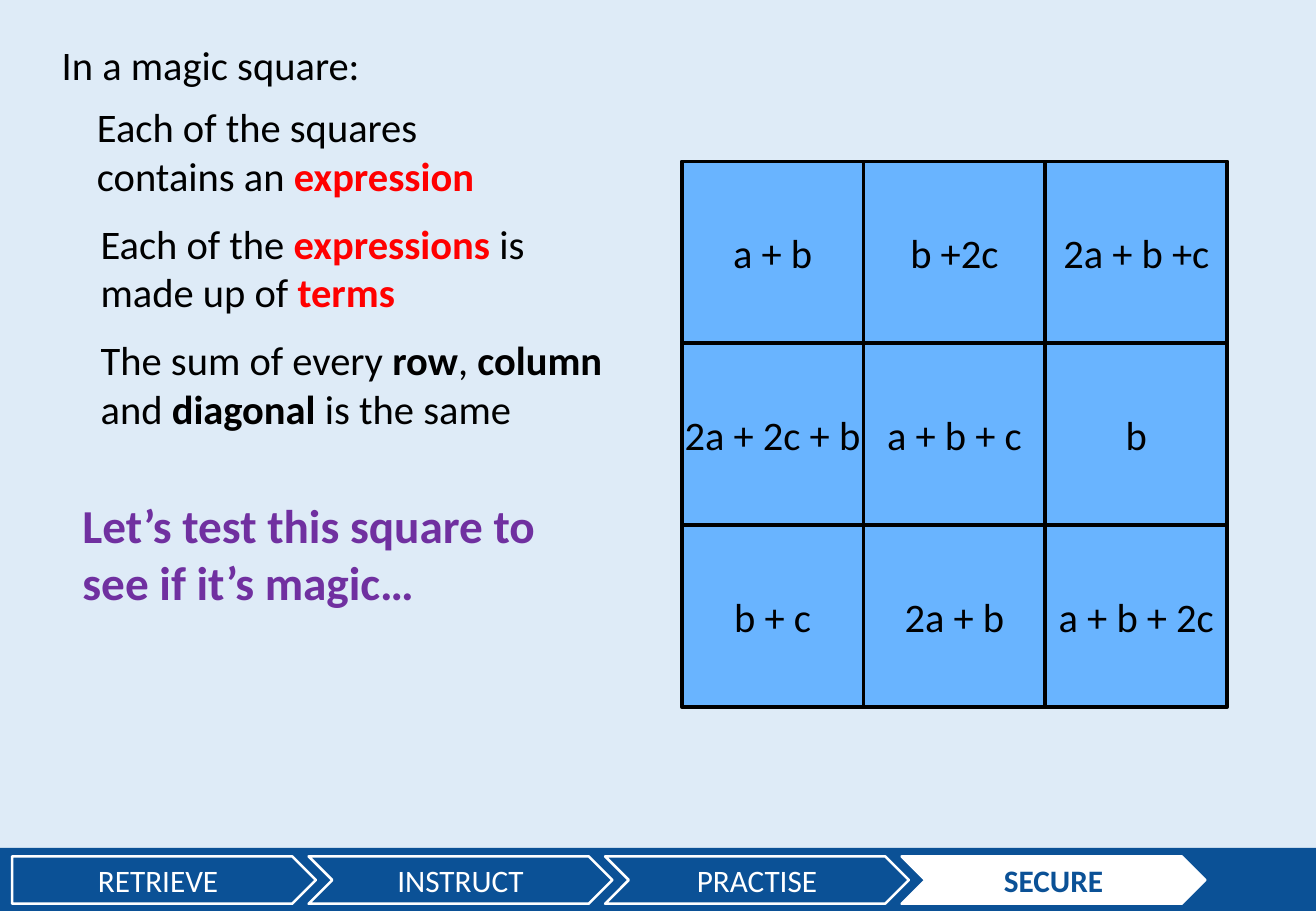
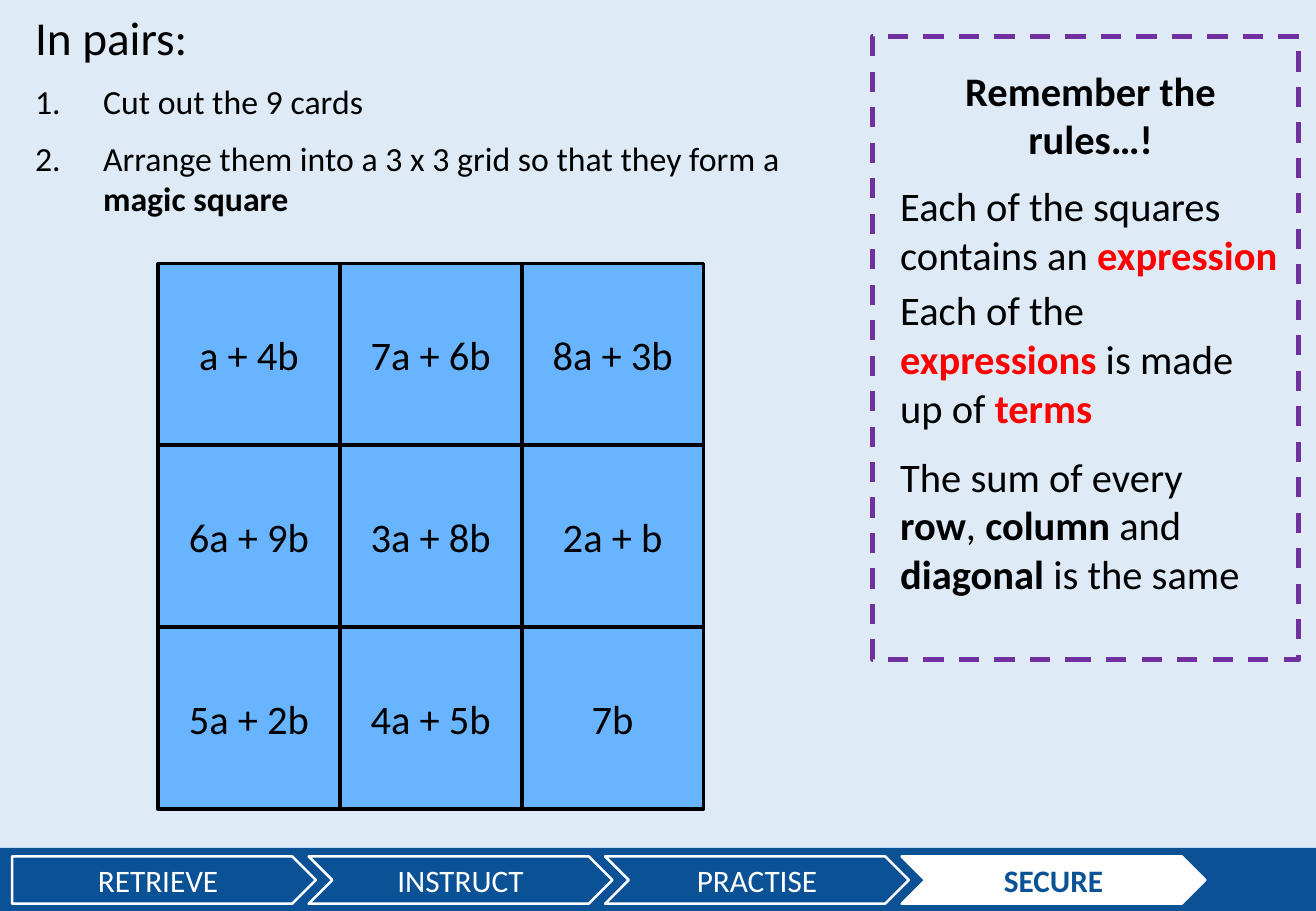
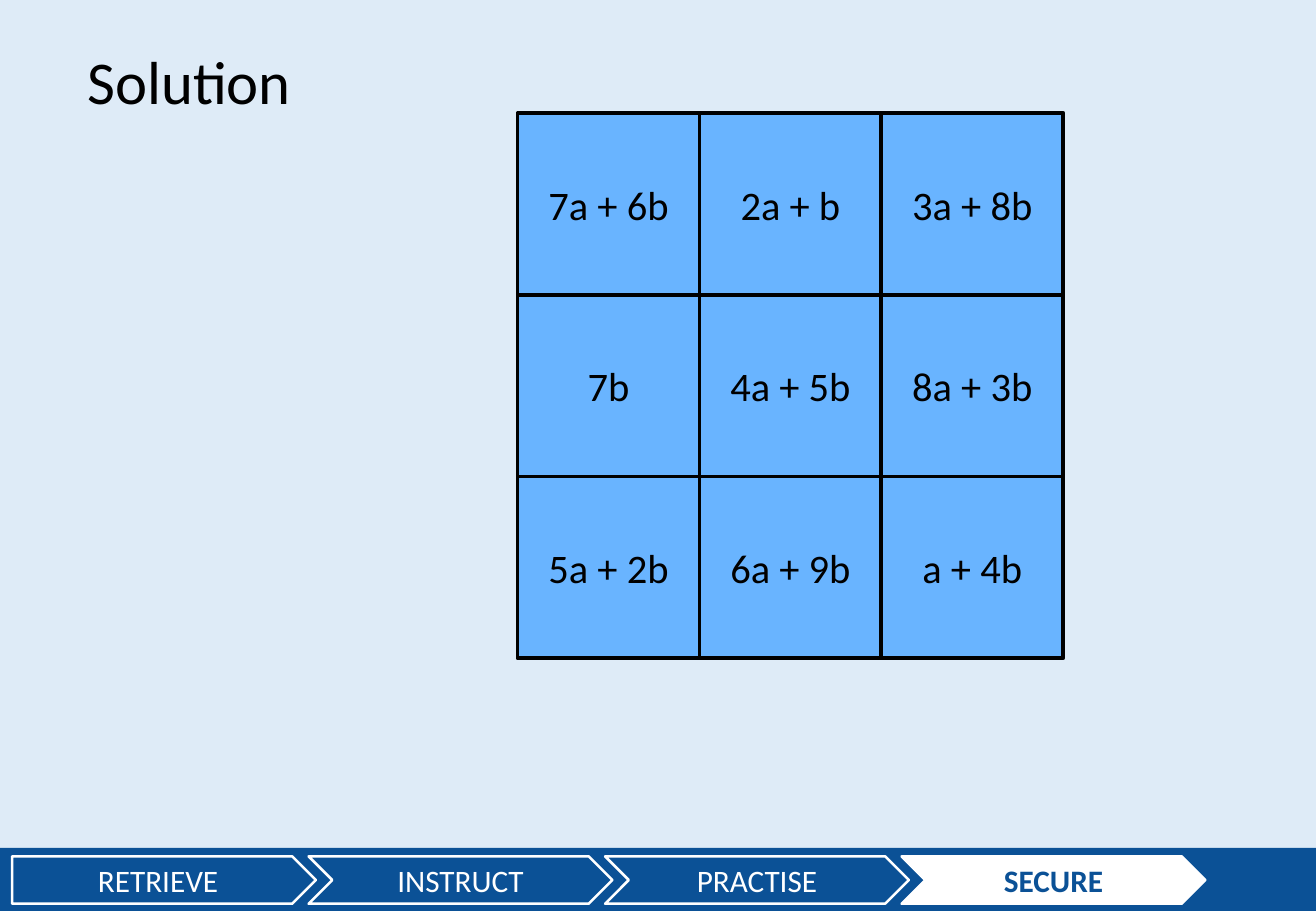
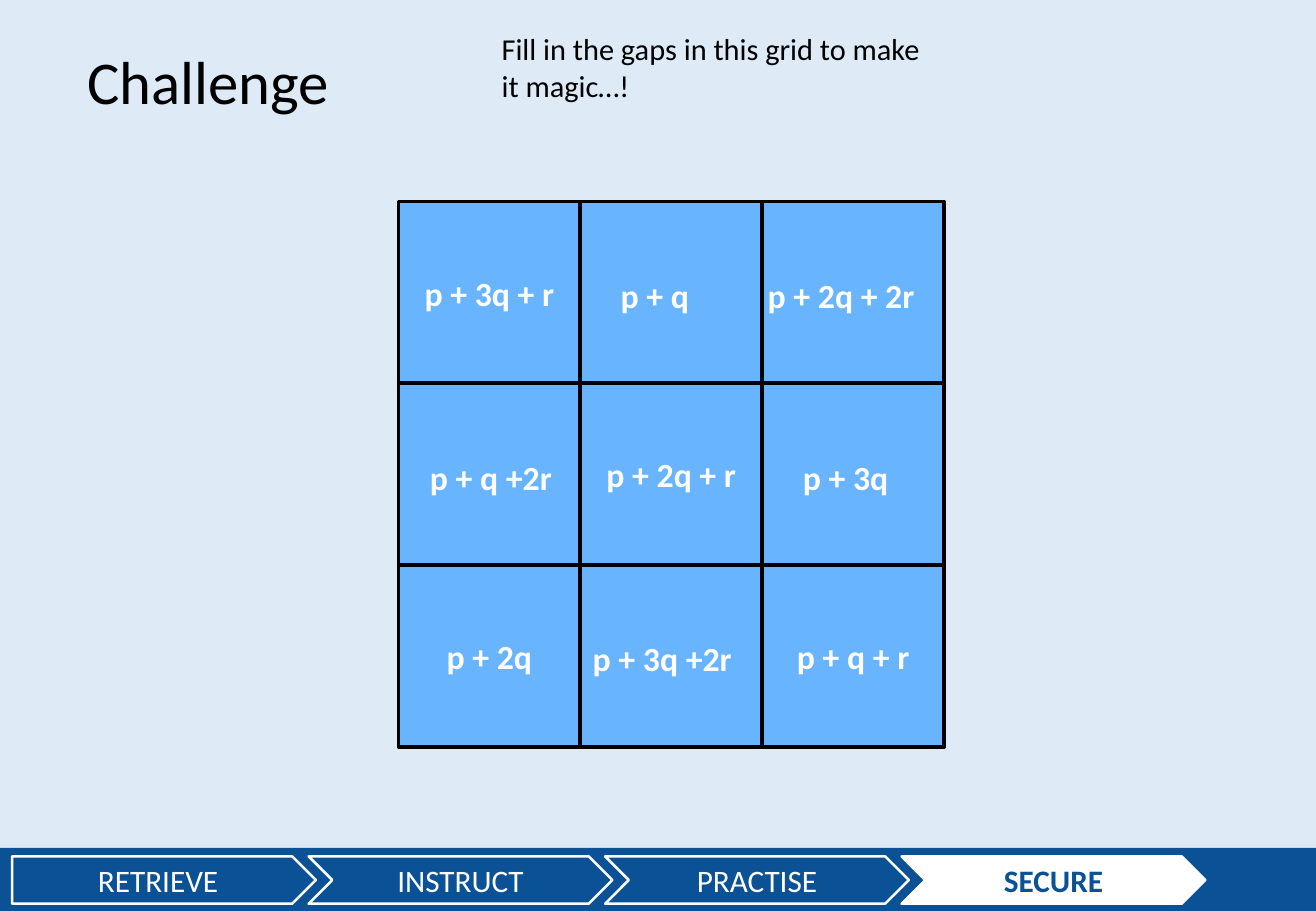
from lxml import etree
from pptx import Presentation
from pptx.dml.color import RGBColor
from pptx.enum.dml import MSO_LINE
from pptx.enum.shapes import MSO_SHAPE
from pptx.enum.text import MSO_ANCHOR, PP_ALIGN
from pptx.oxml.ns import qn
from pptx.util import Inches, Pt

RECT, CHEVRON, ARROW = MSO_SHAPE.RECTANGLE, MSO_SHAPE.CHEVRON, MSO_SHAPE.PENTAGON
LEFT, CENTER = PP_ALIGN.LEFT, PP_ALIGN.CENTER
MIDDLE = MSO_ANCHOR.MIDDLE
DASH = MSO_LINE.DASH

FONT = "Calibri"
COLORS = {
    "page": "DEEBF7",
    "band": "0B5196",
    "cell": "69B4FF",
    "text": "000000",
    "white": "FFFFFF",
    "key": "FF0000",
    "accent": "7030A0",
}
SLIDE_W, SLIDE_H = 10.83, 7.5
BAND_H = 0.52
GRID_SIDE = 4.49
STAGES = ["RETRIEVE", "INSTRUCT", "PRACTISE", "SECURE"]
CURRENT_STAGE = "SECURE"

# Each rule is a list of (text, colour, bold) runs
RULES = [
    [("Each of the squares contains an", "text", False),
     (" expression", "key", True)],
    [("Each of the ", "text", False), ("expressions ", "key", True),
     ("is made up of ", "text", False), ("terms", "key", True)],
    [("The sum of every ", "text", False), ("row", "text", True),
     (", ", "text", False), ("column", "text", True),
     (" and ", "text", False), ("diagonal", "text", True),
     (" is the same", "text", False)],
]


def rgb(name):
    return RGBColor.from_string(COLORS[name])


def add_runs(p, runs, size, align=LEFT):
    p.alignment = align
    for text, color, bold in runs:
        r = p.add_run()
        r.text = text
        r.font.name = FONT
        r.font.size = Pt(size)
        r.font.bold = bold
        r.font.color.rgb = rgb(color)


def add_box(shapes, kind, x, y, w, h, fill=None, line=None, weight=1.5):
    sp = shapes.add_shape(kind, Inches(x), Inches(y), Inches(w), Inches(h))
    sp.shadow.inherit = False
    if fill:
        sp.fill.solid()
        sp.fill.fore_color.rgb = rgb(fill)
    else:
        sp.fill.background()
    if line:
        sp.line.color.rgb = rgb(line)
        sp.line.width = Pt(weight)
    else:
        sp.line.fill.background()
    sp.text_frame.vertical_anchor = MIDDLE
    return sp


def add_text(s, x, y, w, h, runs, size, align=LEFT):
    tb = s.shapes.add_textbox(Inches(x), Inches(y), Inches(w), Inches(h))
    tf = tb.text_frame
    tf.word_wrap = True
    add_runs(tf.paragraphs[0], runs, size, align)
    return tf


def add_title(s, text):
    add_text(s, 0.62, 0.31, 2.92, 0.71, [(text, "text", False)], 36)


def add_stage_band(s, x, y, w, h):
    """Footer band with the four lesson stages."""
    add_box(s.shapes, RECT, x, y, w, h, "band")
    for i, stage in enumerate(STAGES):
        current = stage == CURRENT_STAGE
        sp = add_box(s.shapes, CHEVRON if i else ARROW,
                     x + 0.1 + 2.44 * i, y + 0.07, 2.5, 0.39,
                     "white" if current else "band", "white")
        color = "band" if current else "white"
        add_runs(sp.text_frame.paragraphs[0], [(stage, color, current)], 18.5, CENTER)


def add_grid(s, x, y, rows, size=24, color="text", bold=False):
    """Square grid of expressions; an empty string leaves a cell blank."""
    cell = GRID_SIDE / len(rows)
    group = s.shapes.add_group_shape()
    for i, row in enumerate(rows):
        for j, text in enumerate(row):
            sp = add_box(group.shapes, RECT, x + j * cell, y + i * cell,
                         cell, cell, "cell", "text", 2.25)
            if text:
                sp.text_frame.word_wrap = False
                add_runs(sp.text_frame.paragraphs[0], [(text, color, bold)], size, CENTER)


def add_rules(s, x, y, boxes):
    """Three rules; boxes holds left, top, width and height from (x, y)."""
    for runs, (dx, dy, w, h) in zip(RULES, boxes):
        add_text(s, x + dx, y + dy, w, h, runs, 24)


def add_reminder(s, x, y, w, h):
    """Dashed panel that repeats the rules."""
    panel = add_box(s.shapes, RECT, x, y, w, h, None, "accent", 3)
    panel.line.dash_style = DASH
    add_text(s, x + 0.31, y + 0.19, w - 0.54, 0.91,
             [("Remember the rules…!", "text", True)], 24, CENTER)
    add_rules(s, x + 0.13, y, [(0, 1.14, 3.38, 0.91),
                               (0, 2.0, 3.21, 1.31),
                               (0, 3.37, 3.01, 1.31)])


def add_instructions(s, x, y, w, h):
    """Heading followed by numbered steps."""
    tf = add_text(s, x, y, w, h, [("In pairs:", "text", False)], 28)
    steps = [
        [("Cut out the 9 cards", "text", False)],
        [("Arrange them into a 3 x 3 grid so that they form a ", "text", False),
         ("magic square", "text", True)],
    ]
    for runs in steps:
        p = tf.add_paragraph()
        p.space_before = Pt(9.5)
        pPr = p._p.get_or_add_pPr()
        pPr.set("marL", str(Inches(0.56)))
        pPr.set("indent", str(-Inches(0.56)))
        etree.SubElement(pPr, qn("a:buFont")).set("typeface", "+mj-lt")
        etree.SubElement(pPr, qn("a:buAutoNum")).set("type", "arabicPeriod")
        add_runs(p, runs, 20)


def rules_slide(s):
    add_text(s, 0.41, 0.28, 5, 0.5, [("In a magic square:", "text", False)], 24)
    add_rules(s, 0.7, 0.79, [(0, 0, 3.96, 0.91),
                             (0.03, 0.96, 3.96, 0.91),
                             (0.03, 1.92, 4.82, 0.91)])
    add_text(s, 0.58, 4.04, 4.41, 1.04,
             [("Let’s test this square to see if it’s magic…", "accent", True)], 28)
    add_grid(s, 5.61, 1.33, [["a + b", "b +2c", "2a + b +c"],
                             ["2a + 2c + b", "a + b + c", "b"],
                             ["b + c", "2a + b", "a + b + 2c"]])


def pairs_slide(s):
    add_instructions(s, 0.19, 0.02, 6.93, 1.9)
    add_grid(s, 1.3, 2.17, [["a + 4b", "7a + 6b", "8a + 3b"],
                            ["6a + 9b", "3a + 8b", "2a + b"],
                            ["5a + 2b", "4a + 5b", "7b"]])
    add_reminder(s, 7.18, 0.3, 3.51, 5.13)


def solution_slide(s):
    add_title(s, "Solution")
    add_grid(s, 4.26, 0.93, [["7a + 6b", "2a + b", "3a + 8b"],
                             ["7b", "4a + 5b", "8a + 3b"],
                             ["5a + 2b", "6a + 9b", "a + 4b"]])


def challenge_slide(s):
    add_title(s, "Challenge")
    add_text(s, 4.03, 0.2, 3.74, 0.71,
             [("Fill in the gaps in this grid to make it magic…!", "text", False)], 18)
    x, y = 3.28, 1.66
    add_grid(s, x, y, [["p + 3q + r", "", ""],
                       ["", "p + 2q + r", ""],
                       ["p + 2q", "", "p + q + r"]], 20, "white", True)
    # Answers for the blank cells, kept apart from the grid
    answers = [("p + q", 1.73, 0.55, 1.02),
               ("p + 2q + 2r", 2.94, 0.55, 1.57),
               ("p + q +2r", 0.16, 2.05, 1.5),
               ("p + 3q", 3.23, 2.05, 1.57),
               ("p + 3q +2r", 1.5, 3.54, 1.5)]
    for text, dx, dy, w in answers:
        add_text(s, x + dx, y + dy, w, 0.43, [(text, "white", True)], 20)


def main():
    prs = Presentation()
    prs.slide_width, prs.slide_height = Inches(SLIDE_W), Inches(SLIDE_H)
    background = prs.slide_master.background.fill
    background.solid()
    background.fore_color.rgb = rgb("page")
    for build in (rules_slide, pairs_slide, solution_slide, challenge_slide):
        s = prs.slides.add_slide(prs.slide_layouts[6])
        add_stage_band(s, 0, SLIDE_H - BAND_H, SLIDE_W, BAND_H)
        build(s)
    prs.save("out.pptx")


if __name__ == "__main__":
    main()
